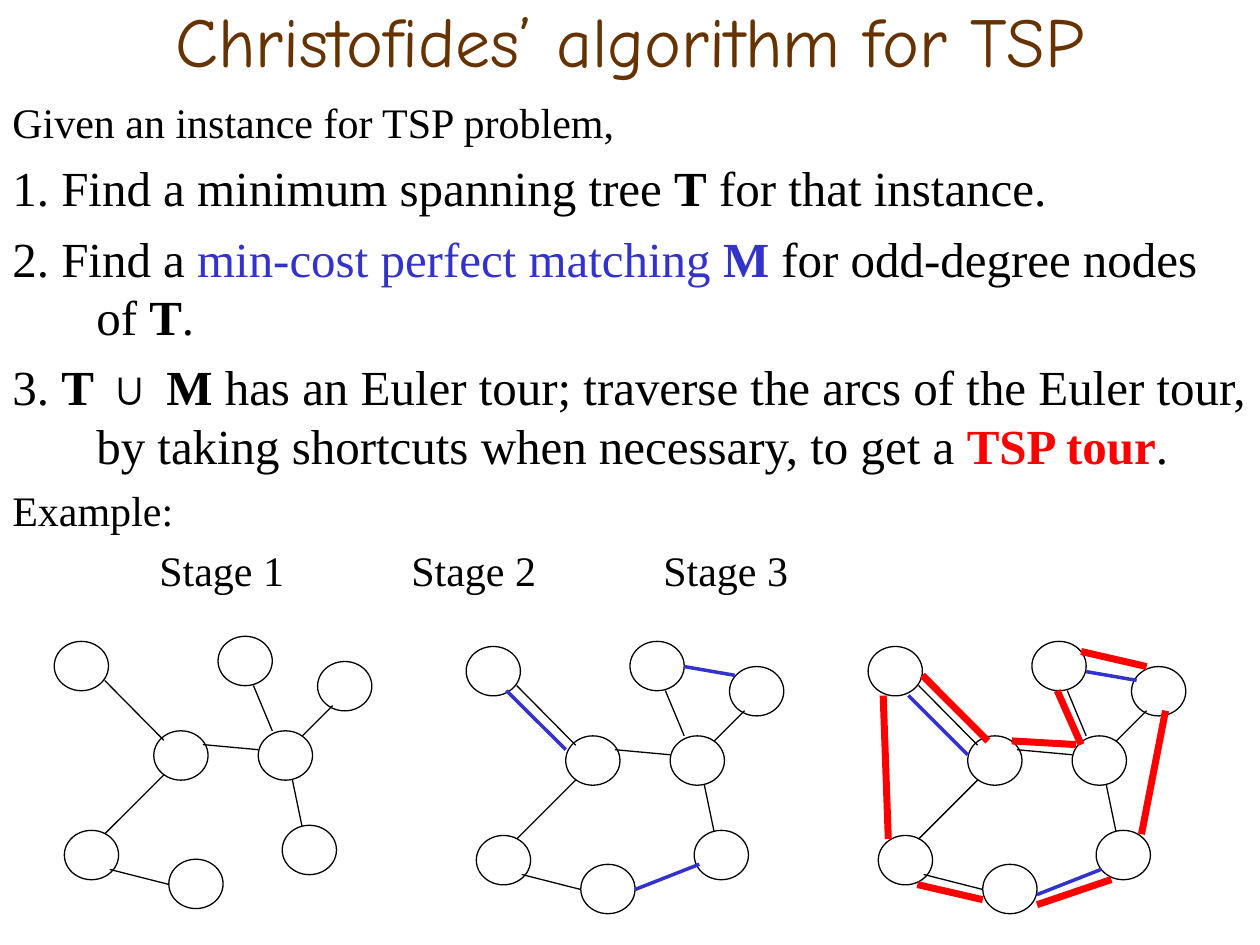
"""Build the slide on Christofides' algorithm with its three example stages."""
from lxml import etree
from pptx import Presentation
from pptx.dml.color import RGBColor
from pptx.enum.shapes import MSO_CONNECTOR, MSO_SHAPE
from pptx.enum.text import MSO_ANCHOR, PP_ALIGN
from pptx.oxml.ns import qn
from pptx.util import Pt

STRAIGHT, OVAL = MSO_CONNECTOR.STRAIGHT, MSO_SHAPE.OVAL
MIDDLE, CENTER = MSO_ANCHOR.MIDDLE, PP_ALIGN.CENTER
COLORS = {"title": "663300", "text": "000000", "node": "FFFFFF",
          "match": "3333CC", "tour": "FF0000"}
TITLE = "Christofides’ algorithm for TSP"
BODY = [
    (24, [("Given an instance for TSP problem,", "text", False)]),
    (28, [("1. Find a minimum spanning tree ", "text", False),
          ("T", "text", True),
          (" for that instance.", "text", False)]),
    (28, [("2. Find a ", "text", False),
          ("min-cost perfect matching ", "match", False),
          ("M ", "match", True),
          ("for odd-degree nodes of ", "text", False),
          ("T", "text", True),
          (".", "text", False)]),
    (28, [("3. ", "text", False),
          ("T ∪ M", "text", True),
          (" has an Euler tour; traverse the arcs of the Euler tour, "
           "by taking shortcuts when necessary, to get a ", "text", False),
          ("TSP tour", "tour", True),
          (".", "text", False)]),
    (24, [("Example:", "text", False)]),
    (24, [("\t\tStage 1\t\t\tStage 2\t\t\tStage 3", "text", False)]),
]
NODE_W, NODE_H = 31, 28.2
NODES = [(5.8, 110.9), (116.6, 54), (0, 2.9), (56.9, 54), (93.6, 0),
         (65.5, 127.4), (130.3, 108), (150.5, 14.4)]
TREE = [(28.8, 25.2, 62.6, 59.4), (85, 61.9, 116.6, 64.8),
        (28.8, 113, 62.6, 79.2), (31.7, 133.2, 65.5, 141.8),
        (136.1, 82.1, 141.6, 108.5), (113.8, 28.1, 124.6, 54),
        (141.8, 56.9, 159.1, 39.6)]
MATCHING = [(23, 28.1, 56.9, 61.9), (124.6, 14.4, 153.4, 19.4),
            (96.5, 141.8, 133.2, 127.4)]
TOUR = [(108, 28.1, 121.7, 59), (118.8, 59, 82.1, 56.9),
        (68.4, 56.9, 31, 19.4), (8.6, 31, 11.5, 113),
        (28.1, 139, 65.5, 147.6), (96.5, 150.5, 139, 136.1),
        (156.2, 110.2, 169.9, 39.6), (159.1, 14.4, 121.7, 5.8)]
TREE_STYLE, MATCH_STYLE, TOUR_STYLE = ("text", 0.75), ("match", 2), ("tour", 4)
STAGES = [
    (31, 363.6, [(TREE, TREE_STYLE, 0)]),
    (266.4, 366.5, [(TREE, TREE_STYLE, 0), (MATCHING, MATCH_STYLE, 0)]),
    (496.1, 366.5, [(TREE, TREE_STYLE, 0), (MATCHING, MATCH_STYLE, 2.9),
                    (TOUR, TOUR_STYLE, 0)]),
]


def rgb(name):
    return RGBColor.from_string(COLORS[name])


def add_box(s, top, height):
    tf = s.shapes.add_textbox(0, Pt(top), Pt(720), Pt(height)).text_frame
    tf.word_wrap = True
    return tf


def add_run(p, text, color, **font):
    r = p.add_run()
    r.text = text
    r.font.color.rgb = rgb(color)
    for key, value in font.items():
        setattr(r.font, key, value)


def add_body(s):
    tf = add_box(s, 51.5, 488.5)
    for i, (size, runs) in enumerate(BODY):
        p = tf.add_paragraph() if i else tf.paragraphs[0]
        pPr = p._p.get_or_add_pPr()
        pPr.set("marL", str(Pt(48)))
        pPr.set("indent", str(-Pt(48)))
        p.space_before = Pt(round(size * 0.23, 1) if i else 0)
        for text, color, bold in runs:
            add_run(p, text, color, name="Times New Roman", size=Pt(size), bold=bold)


def add_node(s, x, y):
    node = s.shapes.add_shape(OVAL, Pt(x), Pt(y), Pt(NODE_W), Pt(NODE_H))
    node.shadow.inherit = False
    node.fill.solid()
    node.fill.fore_color.rgb = rgb("node")
    node.line.color.rgb = rgb("text")
    node.line.width = Pt(0.75)


def add_edge(s, x1, y1, x2, y2, color, width):
    edge = s.shapes.add_connector(STRAIGHT, Pt(x1), Pt(y1), Pt(x2), Pt(y2))
    edge.line.color.rgb = rgb(color)
    edge.line.width = Pt(width)
    etree.SubElement(edge._element.spPr, qn("a:effectLst"))


def main():
    prs = Presentation()
    prs.slide_width, prs.slide_height = Pt(720), Pt(540)
    s = prs.slides.add_slide(prs.slide_layouts[6])
    tf = add_box(s, 0, 45)
    tf.vertical_anchor = MIDDLE
    p = tf.paragraphs[0]
    p.alignment = CENTER
    add_run(p, TITLE, "title", name="Comic Neue", size=Pt(40))
    add_body(s)
    for left, top, layers in STAGES:
        for x, y in NODES:
            add_node(s, left + x, top + y)
        for edges, style, drop in layers:
            for x1, y1, x2, y2 in edges:
                add_edge(s, left + x1, top + drop + y1,
                         left + x2, top + drop + y2, *style)
    prs.save("out.pptx")


if __name__ == "__main__":
    main()
